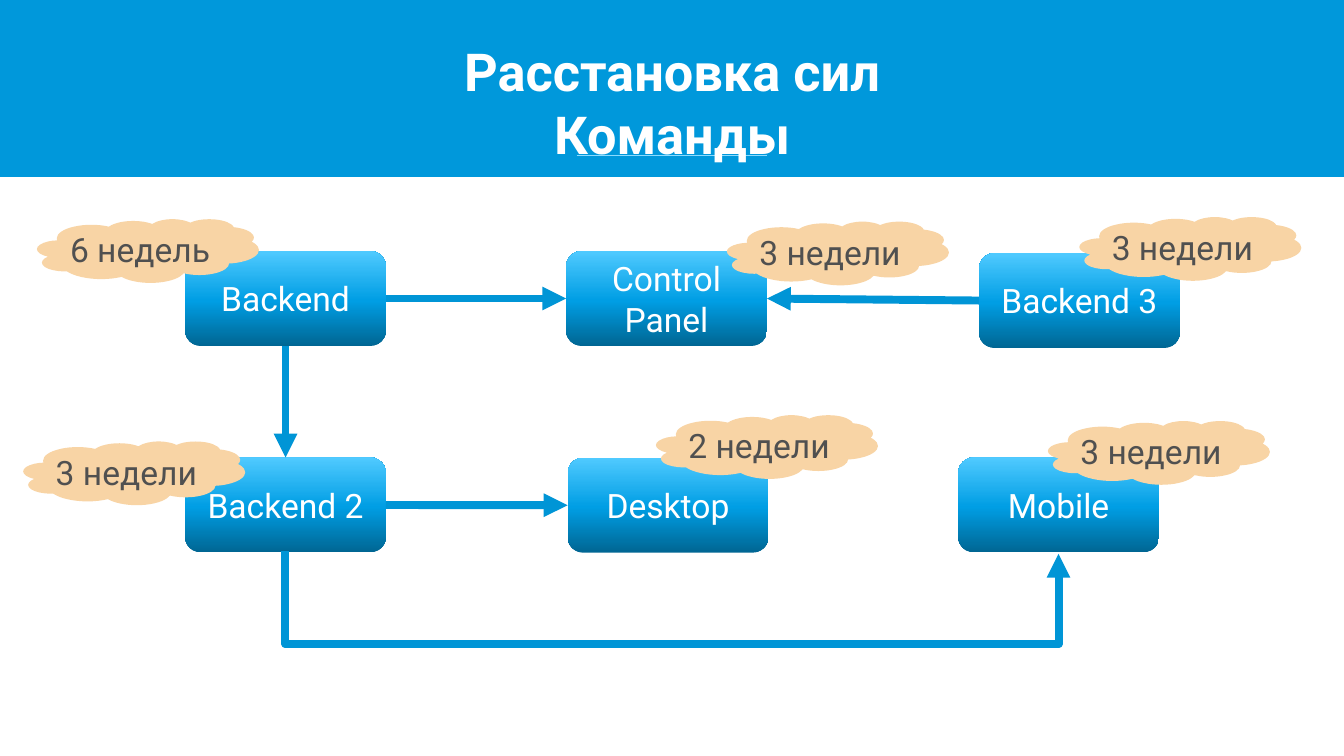
from copy import deepcopy
from typing import NamedTuple

from pptx import Presentation
from pptx.dml.color import RGBColor
from pptx.enum.shapes import MSO_CONNECTOR, MSO_SHAPE
from pptx.enum.text import MSO_ANCHOR, PP_ALIGN
from pptx.oxml.ns import qn
from pptx.oxml.xmlchemy import OxmlElement
from pptx.util import Inches, Pt

RECT, ROUND, CLOUD = MSO_SHAPE.RECTANGLE, MSO_SHAPE.ROUNDED_RECTANGLE, MSO_SHAPE.CLOUD
LINE, ELBOW = MSO_CONNECTOR.STRAIGHT, MSO_CONNECTOR.ELBOW
MIDDLE, TOP, CENTER = MSO_ANCHOR.MIDDLE, MSO_ANCHOR.TOP, PP_ALIGN.CENTER

WIDTH = 10
HEIGHT = WIDTH * 9 / 16
FONT = "Roboto"
WHITE, GREY, SAND = "FFFFFF", "505050", "F8D4A5"
BLUE, ARROW, RULE = "0098DB", "0095D6", "8BDBFF"
STOPS = ((0, "006693"), (0.48, "009EE4"), (1, "50CAFF"))


# Every place is in percent of the slide's width
class Box(NamedTuple):
    text: str
    x: float
    y: float
    w: float = 14.95
    h: float = 7.07

    def side(self, dx: float, dy: float) -> tuple[float, float]:
        return self.x + self.w * dx, self.y + self.h * dy


class Cloud(NamedTuple):
    text: str
    x: float
    y: float
    w: float = 16.5
    h: float = 4.74


LEFT, RIGHT, UPPER, LOWER = (0, 0.5), (1, 0.5), (0.5, 0), (0.5, 1)

BACK = Box("Backend", 13.77, 18.68)
PANEL = Box("Control Panel", 42.12, 18.68)
BACK2 = Box("Backend 2", 13.77, 34.04)
DESK = Box("Desktop", 42.23, 34.06)
MOBILE = Box("Mobile", 71.29, 34.04)
BACK3 = Box("Backend 3", 72.84, 18.83)
BOXES = (BACK, PANEL, BACK2, DESK, MOBILE, BACK3)

LINKS = (
    (BACK, RIGHT, PANEL, LEFT),
    (BACK2, RIGHT, DESK, LEFT),
    (BACK, LOWER, BACK2, UPPER),
    (BACK3, LEFT, PANEL, RIGHT),
)

CLOUDS = (
    Cloud("6 недель", 2.76, 16.3),
    Cloud("3 недели", 54.1, 16.48),
    Cloud("3 недели", 1.74, 32.84),
    Cloud("2 недели", 48.82, 30.88),
    Cloud("3 недели", 77.98, 31.32),
    Cloud("3 недели", 80.32, 16.14),
)


def rgb(code: str) -> RGBColor:
    return RGBColor.from_string(code)


def unit(*parts: float) -> list[int]:
    return [Inches(part * WIDTH / 100) for part in parts]


def write(shape, text: str, size: float, color: str, bold: bool = False, anchor=MIDDLE) -> None:
    frame = shape.text_frame
    frame.word_wrap = True
    frame.vertical_anchor = anchor
    frame.margin_left = frame.margin_right = frame.margin_top = frame.margin_bottom = 0
    para = frame.paragraphs[0]
    para.alignment = CENTER
    for row, words in enumerate(text.split("\n")):
        if row:
            para.add_line_break()
        run = para.add_run()
        run.text = words
        font = run.font
        font.name, font.size, font.bold = FONT, Pt(size), bold
        font.color.rgb = rgb(color)


def block(slide, kind, x: float, y: float, w: float, h: float, color: str = ""):
    shape = slide.shapes.add_shape(kind, *unit(x, y, w, h))
    shape.shadow.inherit = False
    shape.line.fill.background()
    if color:
        shape.fill.solid()
        shape.fill.fore_color.rgb = rgb(color)
    return shape


def shade(shape) -> None:
    fill = shape.fill
    fill.gradient()
    fill.gradient_angle = 90
    stops = shape.element.spPr.find(".//" + qn("a:gsLst"))
    stops.append(deepcopy(stops[0]))
    for stop, (place, color) in zip(fill.gradient_stops, STOPS):
        stop.position = place
        stop.color.rgb = rgb(color)


def link(slide, kind, start: tuple, end: tuple, color: str, width: float, head: bool = True):
    wire = slide.shapes.add_connector(kind, *unit(*start, *end))
    wire.line.color.rgb = rgb(color)
    wire.line.width = Pt(width)
    if head:
        tip = OxmlElement("a:tailEnd")
        tip.set("type", "triangle")
        wire.line._get_or_add_ln().append(tip)
    wire.element.spPr.append(OxmlElement("a:effectLst"))
    return wire


def detour(slide, first: Box, last: Box, depth: float, gap: float = 0.2) -> None:
    """Lead a line from under one box to under another, turned a quarter."""
    (left, low), (right, _) = first.side(*LOWER), last.side(*LOWER)
    mid, span = (left + right) / 2, right - left
    start = mid - gap / 2, low - span / 2
    end = mid + gap / 2, low + span / 2
    props = link(slide, ELBOW, start, end, ARROW, 4.25).element.spPr
    frame = props.find(qn("a:xfrm"))
    frame.set("rot", str(270 * 60000))
    frame.set("flipH", "1")
    guide = OxmlElement("a:gd")
    guide.set("name", "adj1")
    guide.set("fmla", f"val {round(depth / gap * 100000)}")
    props.find(qn("a:prstGeom")).get_or_add_avLst().append(guide)


def main() -> None:
    deck = Presentation()
    deck.slide_width, deck.slide_height = Inches(WIDTH), Inches(HEIGHT)
    slide = deck.slides.add_slide(deck.slide_layouts[6])

    # Header band, rule and title
    block(slide, RECT, 0, 0, 100, 13.17, BLUE)
    link(slide, LINE, (42.9, 11.55), (57.1, 11.55), RULE, 0.75, head=False)
    title = slide.shapes.add_textbox(*unit(5.9, 2.93, 88.2, 3.9))
    write(title, "Расстановка сил\nКоманды", 28, WHITE, bold=True, anchor=TOP)

    # Teams
    for box in BOXES:
        shape = block(slide, ROUND, box.x, box.y, box.w, box.h)
        shade(shape)
        write(shape, box.text, 18, WHITE)

    # Links between teams
    for first, out, last, into in LINKS:
        link(slide, LINE, first.side(*out), last.side(*into), ARROW, 4.25)
    detour(slide, BACK2, MOBILE, depth=6.9)

    # Time estimates
    for cloud in CLOUDS:
        shape = block(slide, CLOUD, cloud.x, cloud.y, cloud.w, cloud.h, SAND)
        write(shape, cloud.text, 18, GREY)

    deck.save("out.pptx")


if __name__ == "__main__":
    main()
